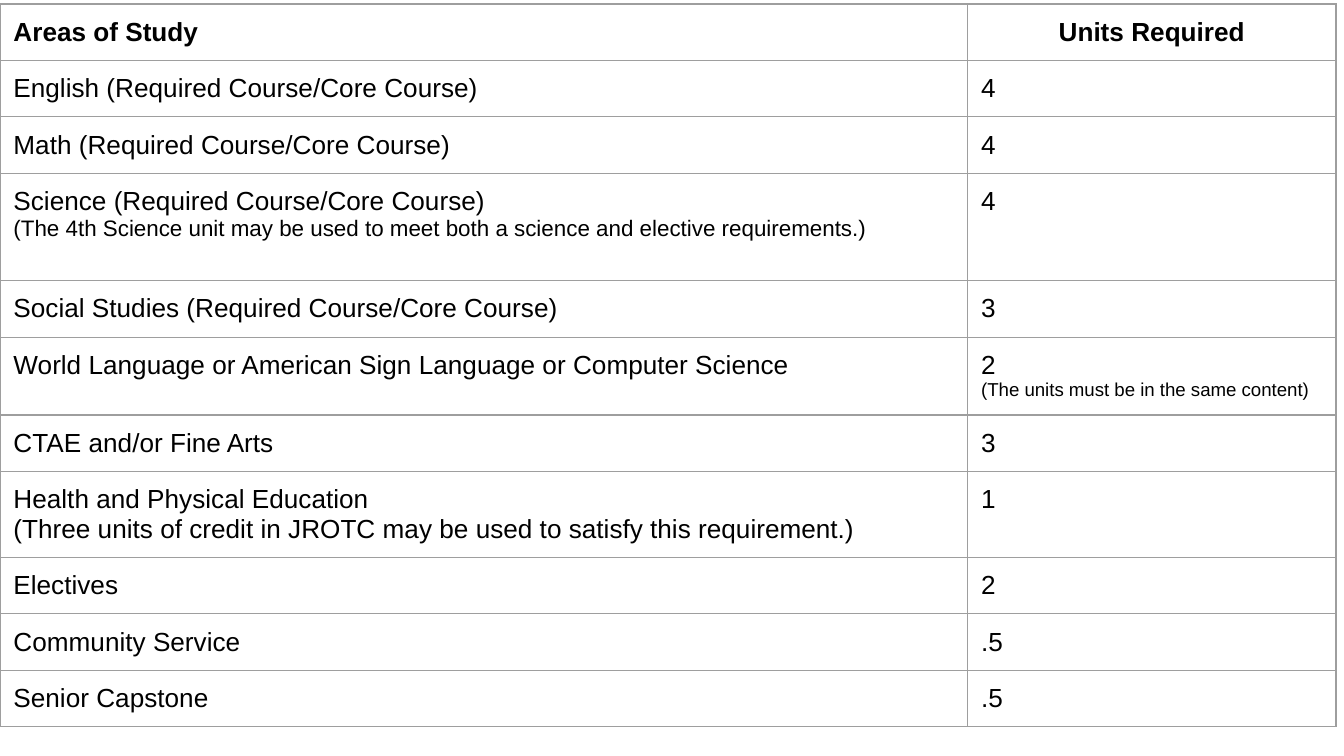
from lxml.etree import SubElement
from pptx import Presentation
from pptx.dml.color import RGBColor as RGB
from pptx.enum.text import PP_ALIGN
from pptx.oxml.ns import qn
from pptx.util import Inches, Pt

COLORS = {"text": "000000", "border": "9E9E9E"}
FONT, SIZE = "Arial", 14
WIDTH, ASPECT = 10, 16 / 9
LEFT, TOP, MARGIN = 0, 0.03, 0.1
COLUMNS = [7.2, 2.74]
ROW = 0.42

HEADER = ("Areas of Study", "Units Required")
AREAS = [
    ("English (Required Course/Core Course)", "4"),
    ("Math (Required Course/Core Course)", "4"),
    ("Science (Required Course/Core Course)\n"
     "(The 4th Science unit may be used to meet both a science and elective requirements.)", "4"),
    ("Social Studies (Required Course/Core Course)", "3"),
    ("World Language or American Sign Language or Computer Science",
     "2\n(The units must be in the same content)"),
    ("CTAE and/or Fine Arts", "3"),
    ("Health and Physical Education\n"
     "(Three units of credit in JROTC may be used to satisfy this requirement.)", "1"),
    ("Electives", "2"),
    ("Community Service", ".5"),
    ("Senior Capstone", ".5"),
]
ROWS = [HEADER] + AREAS
TALL_ROWS = {3: 0.8, 5: 0.58, 7: 0.64}
NOTE_SIZES = {(3, 0): 12, (5, 1): 10}


def add_borders(cell):
    tc_pr = cell._tc.get_or_add_tcPr()
    for side in ("lnL", "lnR", "lnT", "lnB"):
        ln = SubElement(tc_pr, qn(f"a:{side}"), w=str(Pt(0.75)))
        fill = SubElement(ln, qn("a:solidFill"))
        SubElement(fill, qn("a:srgbClr"), val=COLORS["border"])


def fill_cell(cell, text, row, col):
    cell.margin_left = cell.margin_right = Inches(MARGIN)
    cell.margin_top = cell.margin_bottom = Inches(MARGIN)
    add_borders(cell)
    cell.fill.background()
    cell.text_frame.text = text
    for i, p in enumerate(cell.text_frame.paragraphs):
        p.alignment = PP_ALIGN.CENTER if row == 0 and col == 1 else PP_ALIGN.LEFT
        for r in p.runs:
            r.font.name = FONT
            r.font.size = Pt(NOTE_SIZES.get((row, col), SIZE) if i else SIZE)
            r.font.bold = row == 0
            r.font.color.rgb = RGB.from_string(COLORS["text"])


prs = Presentation()
prs.slide_width, prs.slide_height = Inches(WIDTH), Inches(WIDTH / ASPECT)
s = prs.slides.add_slide(prs.slide_layouts[6])

heights = [TALL_ROWS.get(i, ROW) for i in range(len(ROWS))]
table = s.shapes.add_table(len(ROWS), len(COLUMNS), Inches(LEFT), Inches(TOP),
                           Inches(sum(COLUMNS)), Inches(sum(heights))).table
table.first_row = table.horz_banding = False
for column, width in zip(table.columns, COLUMNS):
    column.width = Inches(width)
for i, (height, texts) in enumerate(zip(heights, ROWS)):
    table.rows[i].height = Inches(height)
    for j, text in enumerate(texts):
        fill_cell(table.cell(i, j), text, i, j)

prs.save("out.pptx")
